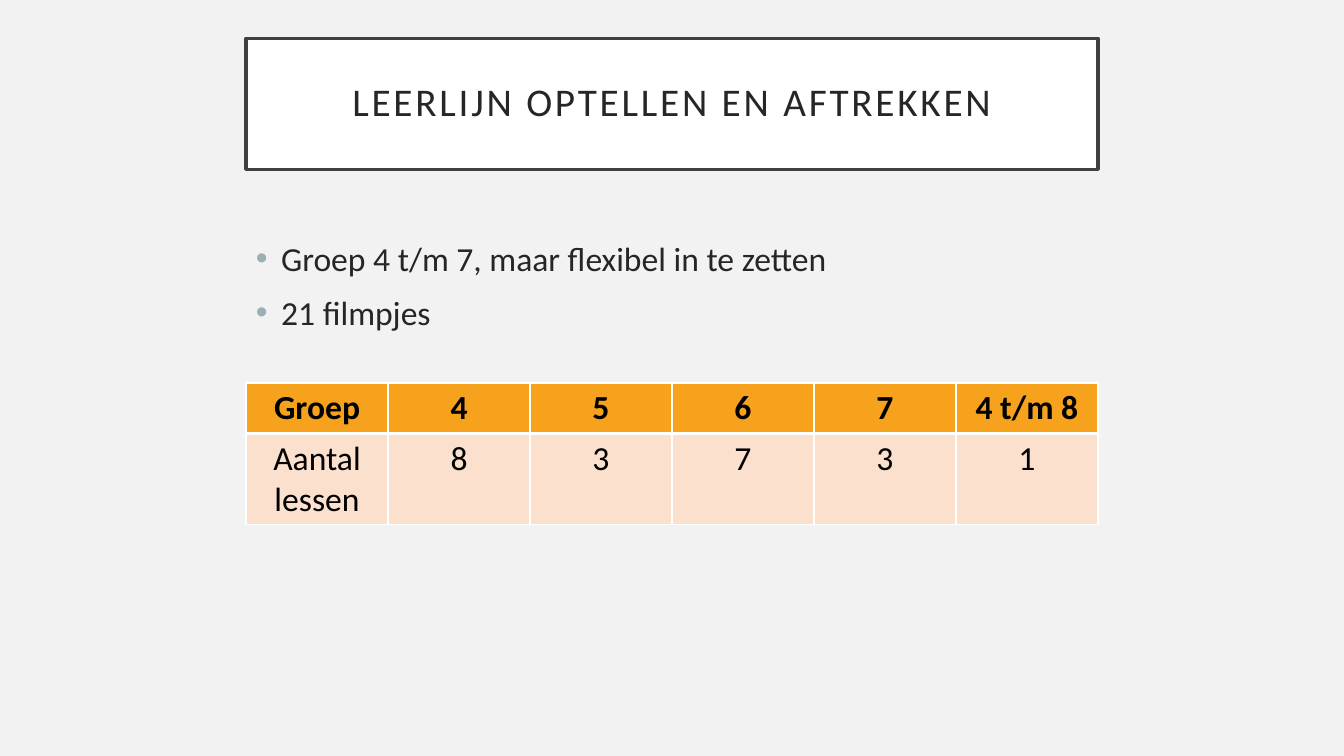
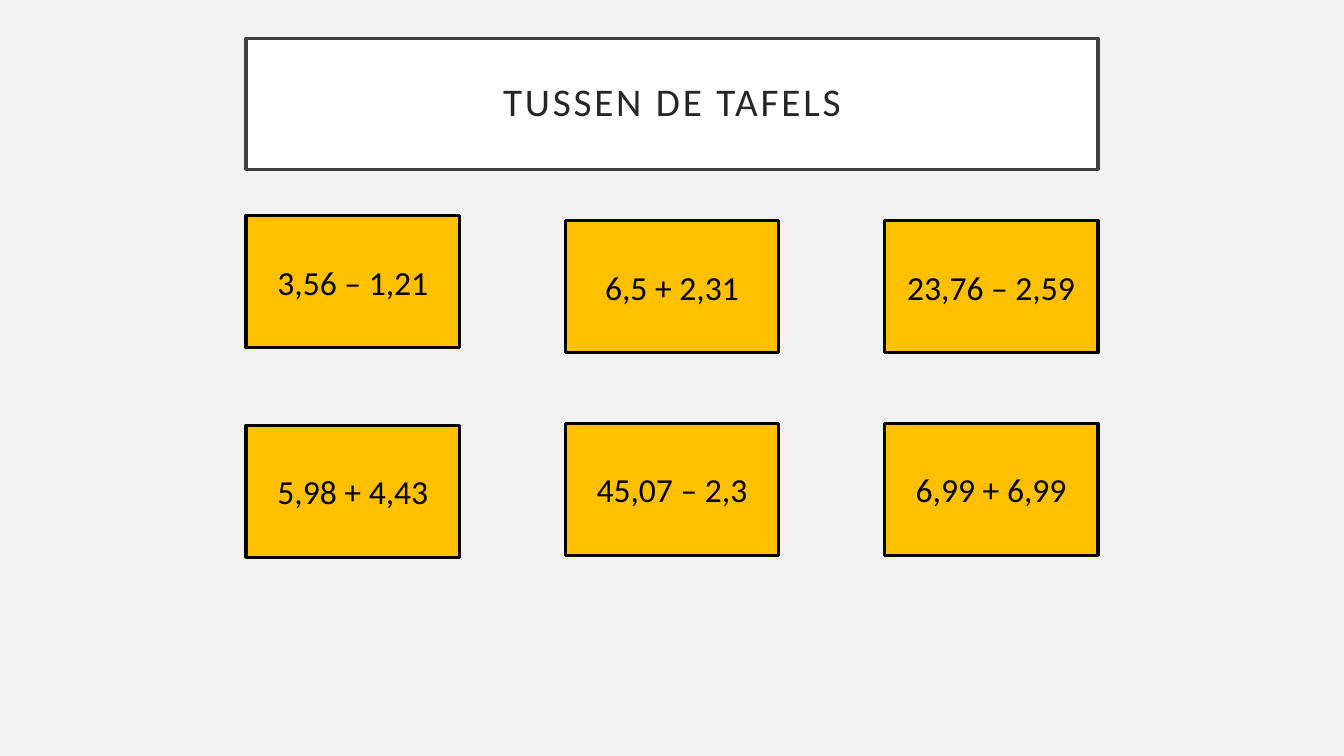
from pptx import Presentation
from pptx.dml.color import RGBColor
from pptx.enum.shapes import MSO_SHAPE
from pptx.enum.text import MSO_ANCHOR, PP_ALIGN
from pptx.oxml.ns import qn
from pptx.util import Inches, Pt
from lxml import etree

RECTANGLE = MSO_SHAPE.RECTANGLE
LEFT, CENTER = PP_ALIGN.LEFT, PP_ALIGN.CENTER
MIDDLE = MSO_ANCHOR.MIDDLE

# Content
TITLES = ["LEERLIJN OPTELLEN EN AFTREKKEN", "TUSSEN DE TAFELS"]
BULLETS = ["Groep 4 t/m 7, maar flexibel in te zetten", "21 filmpjes"]
LESSONS = [
    ["Groep", "4", "5", "6", "7", "4 t/m 8"],
    ["Aantal lessen", "8", "3", "7", "3", "1"],
]
# Each column of cards: tops of its two cards, then their sums
SUM_COLUMNS = [
    ((2.14, 4.22), ("3,56 – 1,21", "5,98 + 4,43")),
    ((2.19, 4.2), ("6,5 + 2,31", "45,07 – 2,3")),
    ((2.19, 4.2), ("23,76 – 2,59", "6,99 + 6,99")),
]

# Shared style
COLORS = {
    "background": "F2F2F2", "white": "FFFFFF", "black": "000000",
    "frame": "404040", "text": "262626", "bullet": "9BAFB5",
    "header": "F6A21D", "body": "FBE0CD", "card": "FFC000",
}
FONT = "Calibri"
SLIDE_WIDTH, SLIDE_HEIGHT = 13.33, 7.5
CONTENT_WIDTH = 8.45
MARGIN = (SLIDE_WIDTH - CONTENT_WIDTH) / 2
CARD_WIDTH, CARD_HEIGHT = 2.12, 1.31
ROW_HEIGHTS = [0.5, 0.9]


def rgb(name):
    return RGBColor.from_string(COLORS[name])


def box(left, top, width, height):
    return [Inches(value) for value in (left, top, width, height)]


def paint(shape, fill, line, line_width):
    shape.fill.solid()
    shape.fill.fore_color.rgb = rgb(fill)
    shape.line.color.rgb = rgb(line)
    shape.line.width = Pt(line_width)


def add_bullet(paragraph):
    properties = paragraph._p.get_or_add_pPr()
    properties.set("marL", str(Inches(0.25)))
    properties.set("indent", str(-Inches(0.25)))
    color = etree.SubElement(properties, qn("a:buClr"))
    etree.SubElement(color, qn("a:srgbClr"), val=COLORS["bullet"])
    etree.SubElement(properties, qn("a:buFont"), typeface="Arial")
    etree.SubElement(properties, qn("a:buChar"), char="•")


def write_text(frame, lines, size=24, color="black", bold=False, align=CENTER,
               line_spacing=1.0, space_before=0, tracking=0, bullet=False):
    for index, line in enumerate(lines):
        paragraph = frame.add_paragraph() if index else frame.paragraphs[0]
        paragraph.alignment = align
        paragraph.line_spacing = line_spacing
        paragraph.space_before = Pt(space_before)
        if bullet:
            add_bullet(paragraph)
        run = paragraph.add_run()
        run.text = line
        font = run.font
        font.name, font.size, font.bold = FONT, Pt(size), bold
        font.color.rgb = rgb(color)
        if tracking:
            font._element.set("spc", str(tracking * 100))


def add_titled_slide(presentation, text):
    slide = presentation.slides.add_slide(presentation.slide_layouts[5])
    title = slide.shapes.title
    title.left, title.top, title.width, title.height = box(
        MARGIN, 0.38, CONTENT_WIDTH, 1.3)
    paint(title, "white", "frame", 2.5)
    frame = title.text_frame
    frame.vertical_anchor = MIDDLE
    frame.margin_left = frame.margin_right = Inches(0.2)
    frame.margin_top = frame.margin_bottom = Inches(0.2)
    write_text(frame, [text], size=28, color="text", line_spacing=0.9, tracking=2)
    return slide


def set_borders(cell, widths):
    properties = cell._tc.get_or_add_tcPr()
    for side, width in widths.items():
        line = etree.SubElement(properties, qn(f"a:ln{side}"), w=str(Pt(width)))
        fill = etree.SubElement(line, qn("a:solidFill"))
        etree.SubElement(fill, qn("a:srgbClr"), val=COLORS["white"])


def add_lesson_table(slide):
    table = slide.shapes.add_table(
        len(LESSONS), len(LESSONS[0]),
        *box(MARGIN, 3.8, CONTENT_WIDTH, sum(ROW_HEIGHTS))).table
    for column in table.columns:
        column.width = Inches(CONTENT_WIDTH / len(LESSONS[0]))
    for row_index, values in enumerate(LESSONS):
        table.rows[row_index].height = Inches(ROW_HEIGHTS[row_index])
        is_header = row_index == 0
        top, bottom = (1, 3) if is_header else (3, 1)
        for column_index, value in enumerate(values):
            cell = table.cell(row_index, column_index)
            set_borders(cell, {"L": 1, "R": 1, "T": top, "B": bottom})
            cell.fill.solid()
            cell.fill.fore_color.rgb = rgb("header" if is_header else "body")
            write_text(cell.text_frame, [value], bold=is_header)


def add_sum_cards(slide):
    step = (CONTENT_WIDTH - CARD_WIDTH) / (len(SUM_COLUMNS) - 1)
    for index, (tops, sums) in enumerate(SUM_COLUMNS):
        for top, text in zip(tops, sums):
            card = slide.shapes.add_shape(
                RECTANGLE, *box(MARGIN + index * step, top, CARD_WIDTH, CARD_HEIGHT))
            card.shadow.inherit = False
            paint(card, "card", "black", 2.25)
            card.text_frame.word_wrap = True
            card.text_frame.vertical_anchor = MIDDLE
            write_text(card.text_frame, [text])


def main():
    presentation = Presentation()
    presentation.slide_width = Inches(SLIDE_WIDTH)
    presentation.slide_height = Inches(SLIDE_HEIGHT)
    background = presentation.slide_master.background.fill
    background.solid()
    background.fore_color.rgb = rgb("background")
    lesson_slide, sum_slide = [
        add_titled_slide(presentation, title) for title in TITLES]

    # Lessons per group
    bullets = lesson_slide.shapes.add_textbox(*box(MARGIN, 2.31, CONTENT_WIDTH, 4.09))
    bullets.text_frame.word_wrap = True
    write_text(bullets.text_frame, BULLETS, color="text", align=LEFT,
               space_before=10, bullet=True)
    add_lesson_table(lesson_slide)

    # Sums to solve
    add_sum_cards(sum_slide)
    presentation.save("out.pptx")


if __name__ == "__main__":
    main()
